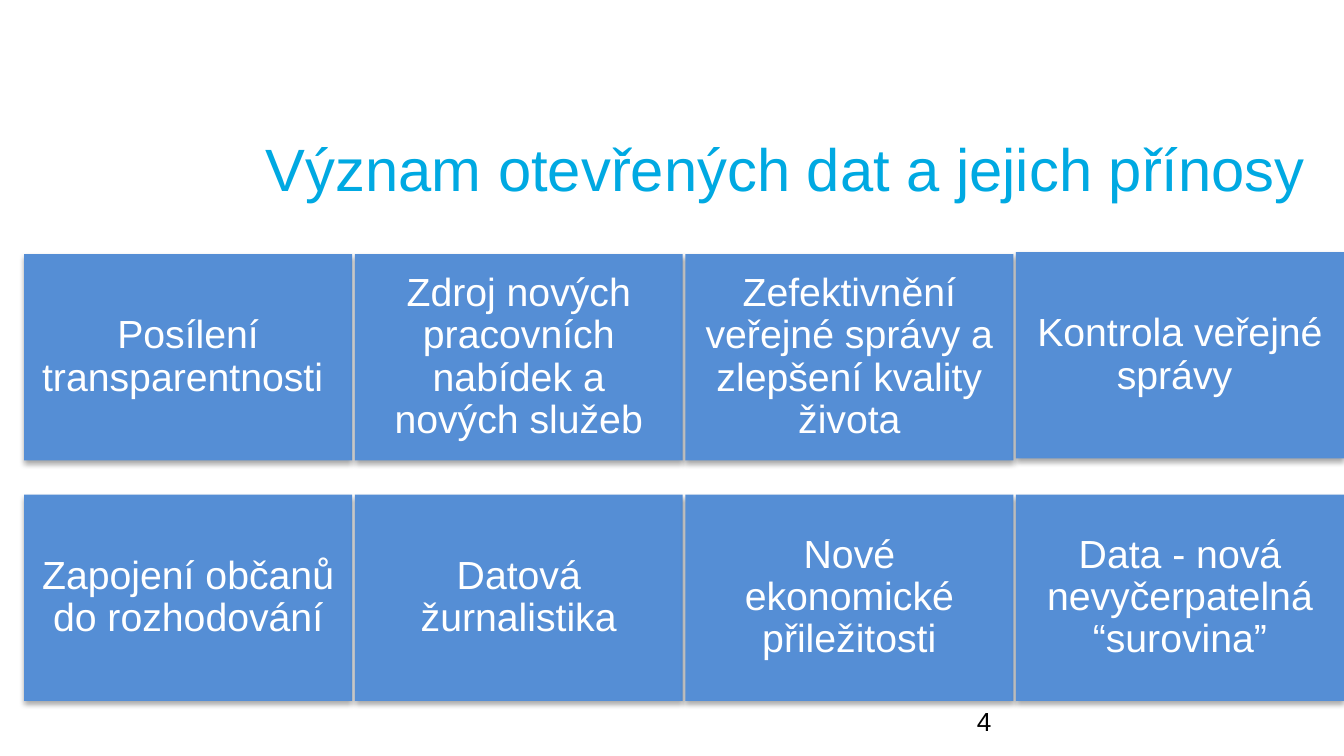
from lxml.etree import SubElement
from pptx import Presentation
from pptx.dml.color import RGBColor
from pptx.enum.shapes import MSO_SHAPE
from pptx.enum.text import MSO_ANCHOR, PP_ALIGN
from pptx.oxml.ns import qn
from pptx.util import Pt

PX = 4572  # 200 px to the inch
CARDS = [
    ["Posílení transparentnosti ",
     "Zdroj nových pracovních nabídek a nových služeb",
     "Zefektivnění veřejné správy a zlepšení kvality života",
     "Kontrola veřejné správy "],
    ["Zapojení občanů do rozhodování",
     "Datová žurnalistika",
     "Nové ekonomické přiležitosti",
     "Data - nová nevyčerpatelná “surovina”"],
]


def px(*nums):
    return [n * PX for n in nums]


def tint(code):
    return RGBColor.from_string(code)


def write(shape, text, size, code, pad, align=PP_ALIGN.LEFT):
    frame = shape.text_frame
    frame.word_wrap = True
    frame.vertical_anchor = MSO_ANCHOR.MIDDLE
    frame.margin_left = frame.margin_right = pad[0] * PX
    frame.margin_top = frame.margin_bottom = pad[1] * PX
    para = frame.paragraphs[0]
    para.alignment = align
    run = para.add_run()
    run.text = text
    run.font.name = "Arial"
    run.font.size = Pt(size)
    run.font.color.rgb = tint(code)
    return para


def label(slide, box, text, size, code, pad):
    write(slide.shapes.add_textbox(*px(*box)), text, size, code, pad)


def shade(shape):
    """Soft shadow straight below the shape."""
    shape.shadow.inherit = False
    effects = shape._element.spPr.find(qn("a:effectLst"))
    outer = SubElement(effects, qn("a:outerShdw"), blurRad=str(Pt(3.1)),
                       dist=str(Pt(1.8)), dir="5400000", rotWithShape="0")
    black = SubElement(outer, qn("a:srgbClr"), val="000000")
    SubElement(black, qn("a:alpha"), val="35000")


def card(slide, box, text):
    shape = slide.shapes.add_shape(MSO_SHAPE.RECTANGLE, *px(*box))
    shape.fill.solid()
    shape.fill.fore_color.rgb = tint("558ED5")
    shape.line.fill.background()
    shade(shape)
    para = write(shape, text, 21, "FFFFFF", (18, 18), PP_ALIGN.CENTER)
    para.line_spacing = 0.9
    para.space_after = Pt(7.35)


def grid(slide, box, rows):
    left, top, width, height = box
    wide, high = 488, 307
    across = (width - wide) // (len(rows[0]) - 1)
    down = (height - high) // (len(rows) - 1)
    for r, row in enumerate(rows):
        for c, text in enumerate(row):
            # the top right card sits slightly higher
            lift = 3 if (r, c) == (0, 3) else 0
            spot = (left + c * across, top + r * down - lift, wide, high)
            card(slide, spot, text)


def main():
    deck = Presentation()
    deck.slide_width, deck.slide_height = px(2000, 1125)
    slide = deck.slides.add_slide(deck.slide_layouts[6])

    # Title
    label(slide, (376, 124, 1624, 250),
          "Význam otevřených dat a jejich přínosy", 32, "00A9E2", (20, 20))
    # Page number
    label(slide, (1434, 1043, 466, 60), "4", 14, "000000", (20, 10))
    # Benefit cards
    grid(slide, (36, 378, 1964, 665), CARDS)

    deck.save("out.pptx")


if __name__ == "__main__":
    main()
